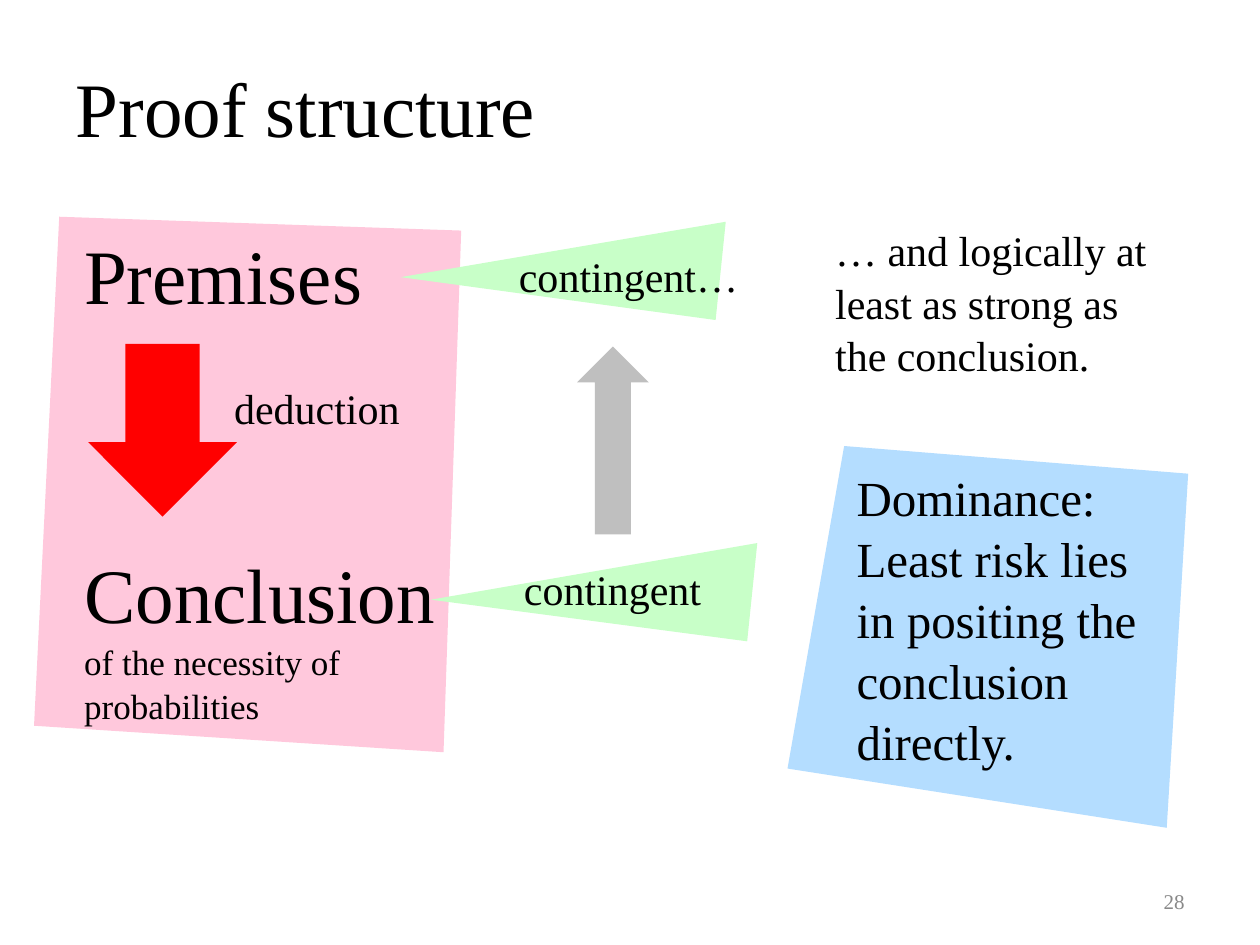
from pptx import Presentation
from pptx.dml.color import RGBColor
from pptx.enum.shapes import MSO_SHAPE
from pptx.enum.text import MSO_ANCHOR, PP_ALIGN
from pptx.util import Pt

PX = 9144
FONT = "Times New Roman"
BLACK = RGBColor(0x00, 0x00, 0x00)
GRAY = RGBColor(0x89, 0x89, 0x89)
SILVER = RGBColor(0xBF, 0xBF, 0xBF)
RED = RGBColor(0xFF, 0x00, 0x00)
PINK = RGBColor(0xFF, 0xC8, 0xDC)
GREEN = RGBColor(0xC8, 0xFF, 0xC8)
BLUE = RGBColor(0xB4, 0xDD, 0xFF)

prs = Presentation()
prs.slide_width = 1000 * PX
prs.slide_height = 750 * PX
s = prs.slides.add_slide(prs.slide_layouts[5])


def add_text(text, box, size=24, color=BLACK, align=PP_ALIGN.LEFT,
             anchor=MSO_ANCHOR.TOP, wrap=True, spacing=1.04, sp=None):
    x, y, w, h = [v * PX for v in box]
    sp = sp or s.shapes.add_textbox(x, y, w, h)
    sp.left, sp.top, sp.width, sp.height = x, y, w, h
    tf = sp.text_frame
    tf.word_wrap = wrap
    tf.vertical_anchor = anchor
    runs = [(text, size)] if isinstance(text, str) else text
    p = tf.paragraphs[0]
    for i, (words, pt) in enumerate(runs):
        for j, line in enumerate(words.split("\n")):
            if j:
                p = tf.add_paragraph()
            p.alignment = align
            p.line_spacing = spacing
            r = p.add_run()
            r.text = line
            r.font.name = FONT
            r.font.size = Pt(pt)
            r.font.color.rgb = color


def paint(sp, color):
    sp.shadow.inherit = False
    sp.fill.solid()
    sp.fill.fore_color.rgb = color
    sp.line.fill.background()


polygons = [
    (PINK, [(47, 172), (366, 183), (352, 597), (27, 576)]),
    (GREEN, [(342, 476), (601, 431), (593, 509)]),
    (BLUE, [(670, 354), (943, 376), (926, 657), (625, 610)]),
    (GREEN, [(318, 220), (576, 176), (568, 254)]),
]
for color, points in polygons:
    fb = s.shapes.build_freeform(*points[0], scale=PX)
    fb.add_line_segments(points[1:], close=True)
    paint(fb.convert_to_shape(), color)

arrows = [
    (MSO_SHAPE.DOWN_ARROW, RED, (70, 273, 118, 137)),
    (MSO_SHAPE.UP_ARROW, SILVER, (458, 275, 57, 149)),
]
for kind, color, box in arrows:
    paint(s.shapes.add_shape(kind, *[v * PX for v in box]), color)

add_text("Proof structure", (50, 30, 876, 110), size=44,
         anchor=MSO_ANCHOR.MIDDLE, spacing=1.0, sp=s.shapes.title)
add_text("Premises", (57, 173, 243, 84), size=44, wrap=False)
add_text([("Conclusion", 44), (" ", 36), ("of the necessity of probabilities", 20)],
         (57, 426, 309, 151))
add_text("deduction", (176, 297, 153, 50), wrap=False)
add_text("contingent…", (402, 192, 216, 50))
add_text("contingent", (406, 441, 163, 51), wrap=False)
add_text("… and logically at least as strong as the conclusion.", (653, 172, 290, 172))
add_text("Dominance:\nLeast risk lies in positing the conclusion directly.",
         (670, 364, 264, 246), size=28)
add_text("28", (717, 695, 233, 40), size=12, color=GRAY,
         align=PP_ALIGN.RIGHT, anchor=MSO_ANCHOR.MIDDLE)

prs.save("out.pptx")
